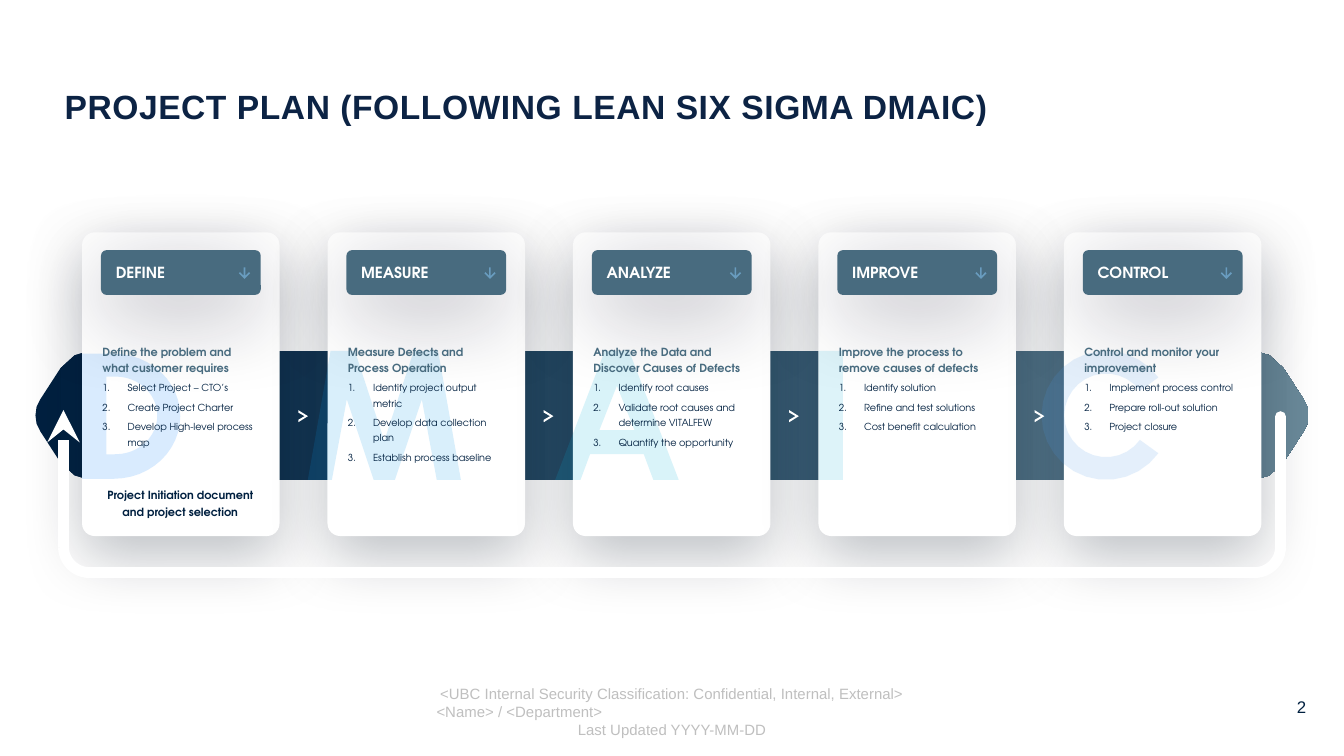
from math import cos, radians, sin
from pptx import Presentation
from pptx.dml.color import RGBColor
from pptx.enum.shapes import MSO_CONNECTOR, MSO_SHAPE
from pptx.enum.text import MSO_ANCHOR, MSO_AUTO_SIZE, PP_ALIGN
from pptx.oxml.ns import qn
from pptx.util import Pt
from lxml.etree import SubElement

INK = {"navy": "002040", "title": "0C2344", "steel": "486B7F", "sky": "699CBF",
       "white": "FFFFFF", "grey": "BFBFBF", "shade": "001020", "dusk": "111029",
       "mid": "2E526B", "mist": "6A8999", "D": "017CFC", "M": "0395E7",
       "A": "04B0DD", "I": "1CB3DD", "C": "4B99E8"}
SANS, GEO = "Arial", "TeX Gyre Adventor"
LEFT, STEP = 44, 131.5  # first card, card pitch
TOP, TALL = 188, 69.1  # top and height of the band

# Each phase: name, aim, numbered steps
PHASES = [
    ("DEFINE", "Define the problem and what customer requires",
     ["Select Project – CTO’s", "Create Project Charter", "Develop High-level process map"]),
    ("MEASURE", "Measure Defects and Process Operation",
     ["Identify project output metric", "Develop data collection plan",
      "Establish process baseline"]),
    ("ANALYZE", "Analyze the Data and Discover Causes of Defects",
     ["Identify root causes", "Validate root causes and determine VITALFEW",
      "Quantify the opportunity"]),
    ("IMPROVE", "Improve the process to remove causes of defects",
     ["Identify solution", "Refine and test solutions", "Cost benefit calculation"]),
    ("CONTROL", "Control and monitor your improvement",
     ["Implement process control", "Prepare roll-out solution", "Project closure"]),
]


def rgb(name):
    return RGBColor.from_string(INK[name])


def arc(x, y, wide, high, start, end):
    """Points on an ellipse around x, y, in steps of a 24th of the sweep."""
    turns = [radians(start + (end - start) * n / 24) for n in range(25)]
    return [(x + wide * cos(t), y + high * sin(t)) for t in turns]


def fold(half, axis, side=0):
    """Close a half outline with its mirror image: side 0 across x, 1 across y."""
    twin = [(x, 2 * axis - y) if side else (2 * axis - x, y) for x, y in reversed(half)]
    return half + twin


def glyphs():
    """Letter outlines, measured from the card's left and the band's top."""
    mid = TALL / 2
    return {
        "D": [[(0, 1.4)] + arc(17, 35, 35.6, 33.5, -90, 90) + [(0, 68.5)],
              [(13, 13.8)] + arc(18, mid, 22.3, 20.8, -90, 90) + [(13, 55.4)]],
        "M": [fold([(30.4, 48.2), (14.6, 0), (1.6, 0), (-10.6, TALL), (2.3, TALL),
                    (10.3, 26), (24.7, TALL)], 30.4)],
        "A": [fold([(30, 0), (56.6, TALL), (43, TALL), (37.9, 55.4)], 23.5),
              [(23.5, 18.7), (14.1, 42.5), (32.9, 42.5)]],
        "I": [[(0, 0), (13, 0), (13, TALL), (0, TALL)]],
        "C": [arc(22.6, mid, 34.6, mid, 36, 324) + arc(22.6, mid, 22.4, 22.4, 324, 36)],
    }


def paint(shape, fill, alpha=None):
    shape.shadow.inherit = False
    shape.line.fill.background()
    shape.fill.solid()
    shape.fill.fore_color.rgb = rgb(fill)
    if alpha:
        tint = shape._element.spPr.find(qn("a:solidFill"))[0]
        SubElement(tint, qn("a:alpha"), val=str(alpha * 1000))


def draw(slide, x, y, paths, fill, alpha=None):
    """Draw a filled outline with its origin at x, y."""
    loops = [[(Pt(x + a), Pt(y + b)) for a, b in path] for path in paths]
    pen = slide.shapes.build_freeform(*loops[0][0], scale=1.0)
    for k, loop in enumerate(loops):
        if k:
            pen.move_to(*loop[0])
        pen.add_line_segments(loop[1:], close=True)
    shape = pen.convert_to_shape()
    paint(shape, fill, alpha)
    return shape


def band(slide):
    """Wide six-sided band with a three-colour blend."""
    edge = [(672, 0), (680, 2.4), (687.6, 9.3), (698.4, 26), (700.4, 30), (701, TALL / 2)]
    shape = draw(slide, 0, TOP, [fold(fold(edge, TALL / 2, side=1), 360)], "navy")
    shape.fill.gradient()
    shape.fill.gradient_angle = 0
    stops = shape._element.spPr.find(qn("a:gradFill")).find(qn("a:gsLst"))
    for stop in list(stops):
        stops.remove(stop)
    for n, tone in enumerate(("navy", "mid", "mist")):
        stop = SubElement(stops, qn("a:gs"), pos=str(n * 50000))
        SubElement(stop, qn("a:srgbClr"), val=INK[tone])


def panel(slide, box, bend, fill, shade, alpha, blur):
    """Rounded box with a soft shadow below it."""
    shape = slide.shapes.add_shape(MSO_SHAPE.ROUNDED_RECTANGLE, *map(Pt, box))
    shape.adjustments[0] = bend
    paint(shape, fill)
    cast = SubElement(shape._element.spPr.find(qn("a:effectLst")), qn("a:outerShdw"),
                      blurRad=str(Pt(blur)), dist=str(Pt(11)), dir="5400000",
                      algn="t", rotWithShape="0")
    tone = SubElement(cast, qn("a:srgbClr"), val=INK[shade])
    SubElement(tone, qn("a:alpha"), val=str(alpha * 1000))
    return shape


def write(frame, text, size, color, font=GEO, bold=False, align=PP_ALIGN.LEFT,
          lead=None, after=None, indent=0, count=False, track=None):
    """Add one paragraph to a text frame."""
    first = frame.paragraphs[0]
    para = frame.add_paragraph() if first.runs else first
    para.alignment = align
    if lead:
        para.line_spacing = Pt(lead)
    if after:
        para.space_after = Pt(after)
    props = para._p.get_or_add_pPr()
    if indent:
        props.set("marL", str(Pt(indent)))
    if count:
        props.set("indent", str(-Pt(indent)))
        SubElement(props, qn("a:buFont"), typeface="+mj-lt")
        SubElement(props, qn("a:buAutoNum"), type="arabicPeriod")
    run = para.add_run()
    run.text = text
    run.font.size, run.font.name, run.font.bold = Pt(size), font, bold
    run.font.color.rgb = rgb(color)
    if track:
        run._r.get_or_add_rPr().set("spc", str(track))


def setup(frame, pad=(7.2, 3.6), mid=False):
    frame.word_wrap = True
    frame.margin_left = frame.margin_right = Pt(pad[0])
    frame.margin_top = frame.margin_bottom = Pt(pad[1])
    frame.vertical_anchor = MSO_ANCHOR.MIDDLE if mid else MSO_ANCHOR.TOP
    return frame


def label(slide, box, grow=False, **look):
    frame = setup(slide.shapes.add_textbox(*map(Pt, box)).text_frame, **look)
    frame.auto_size = MSO_AUTO_SIZE.SHAPE_TO_FIT_TEXT if grow else MSO_AUTO_SIZE.NONE
    return frame


def stroke(slide, x, top, base, head=False):
    """White upright line, with an arrowhead or a round top."""
    line = slide.shapes.add_connector(MSO_CONNECTOR.STRAIGHT, Pt(x), Pt(top), Pt(x), Pt(base))
    line.line.color.rgb, line.line.width = rgb("white"), Pt(5.8)
    edge = line.line._get_or_add_ln()
    if head:
        SubElement(edge, qn("a:headEnd"), type="stealth")
    else:
        edge.set("cap", "rnd")
    SubElement(line._element.spPr, qn("a:effectLst"))


def track_back(slide):
    """Return path from the last card to the first."""
    stroke(slide, 34, 219.6, 293, head=True)
    stroke(slide, 686, 223.2, 293)
    base = slide.shapes.add_shape(MSO_SHAPE.RIGHT_BRACKET, Pt(353.15), Pt(-26.1),
                                  Pt(13.7), Pt(652))
    base.rotation, base.adjustments[0] = 90, 1.014
    base.shadow.inherit = False
    base.fill.background()
    base.line.color.rgb, base.line.width = rgb("white"), Pt(5.8)


def phase(slide, x, name, aim, tasks):
    """Heading tab, arrow and text of one card."""
    tab = panel(slide, (x + 10.1, 134, 85.6, 24), 0.124, "steel", "dusk", 30, 45)
    write(setup(tab.text_frame, pad=(7.2, 0), mid=True), name, 8.2, "white", bold=True)
    arrow = fold([(0.4, 0), (0.4, 4.6), (2.4, 2.6), (3, 3.2), (0, 6.2)], 0)
    draw(slide, x + 87, 143.2, [arrow], "sky")
    frame = label(slide, (x + 3.8, 180.7, 98, 61), grow=True)
    write(frame, aim, 6, "steel", bold=True, lead=8.2, after=2.2)
    for task in tasks:
        write(frame, task, 5.2, "navy", lead=8.2, after=2.2, indent=13.5, count=True)


def main():
    deck = Presentation()
    deck.slide_width, deck.slide_height = Pt(720), Pt(405)
    slide = deck.slides.add_slide(deck.slide_layouts[6])
    cols = [LEFT + STEP * n for n in range(len(PHASES))]

    # Title and page number
    write(label(slide, (34.6, 32.4, 603.4, 49), pad=(0, 0), mid=True),
          "PROJECT PLAN (FOLLOWING LEAN SIX SIGMA DMAIC)", 18, "title", font=SANS,
          bold=True, lead=21, track=30)
    write(label(slide, (676, 373, 23.8, 15), pad=(0, 0)), "2", 9, "navy", font=SANS,
          align=PP_ALIGN.RIGHT)

    # Band, cards, letters and chevrons
    band(slide)
    for x in cols:
        panel(slide, (x, 124.5, 105.8, 162.7), 0.064, "white", "shade", 25, 34)
    for x, (glyph, paths) in zip(cols, glyphs().items()):
        draw(slide, x, TOP, paths, glyph, alpha=15)
    chevron = fold([(3.4, 3.25), (0, 1.3), (0, 0), (5.2, 3.25)], 3.25, side=1)
    for x in cols[:-1]:
        draw(slide, x + 115.8, 219.7, [chevron], "white")

    # Return path, then card content
    track_back(slide)
    for x, item in zip(cols, PHASES):
        phase(slide, x, *item)
    write(label(slide, (47.5, 256.5, 98, 24.5), grow=True),
          "Project Initiation document and project selection", 6, "navy", bold=True,
          align=PP_ALIGN.CENTER, lead=9)

    # Footer
    foot = label(slide, (218.2, 367.2, 283.7, 28.1), mid=True)
    look = dict(size=8, color="grey", font=SANS, lead=9.6)
    write(foot, "<UBC Internal Security Classification: Confidential, Internal, External>",
          align=PP_ALIGN.CENTER, **look)
    write(foot, "<Name> / <Department>", indent=8.6, **look)
    write(foot, "Last Updated YYYY-MM-DD", align=PP_ALIGN.CENTER, **look)
    deck.save("out.pptx")


if __name__ == "__main__":
    main()
